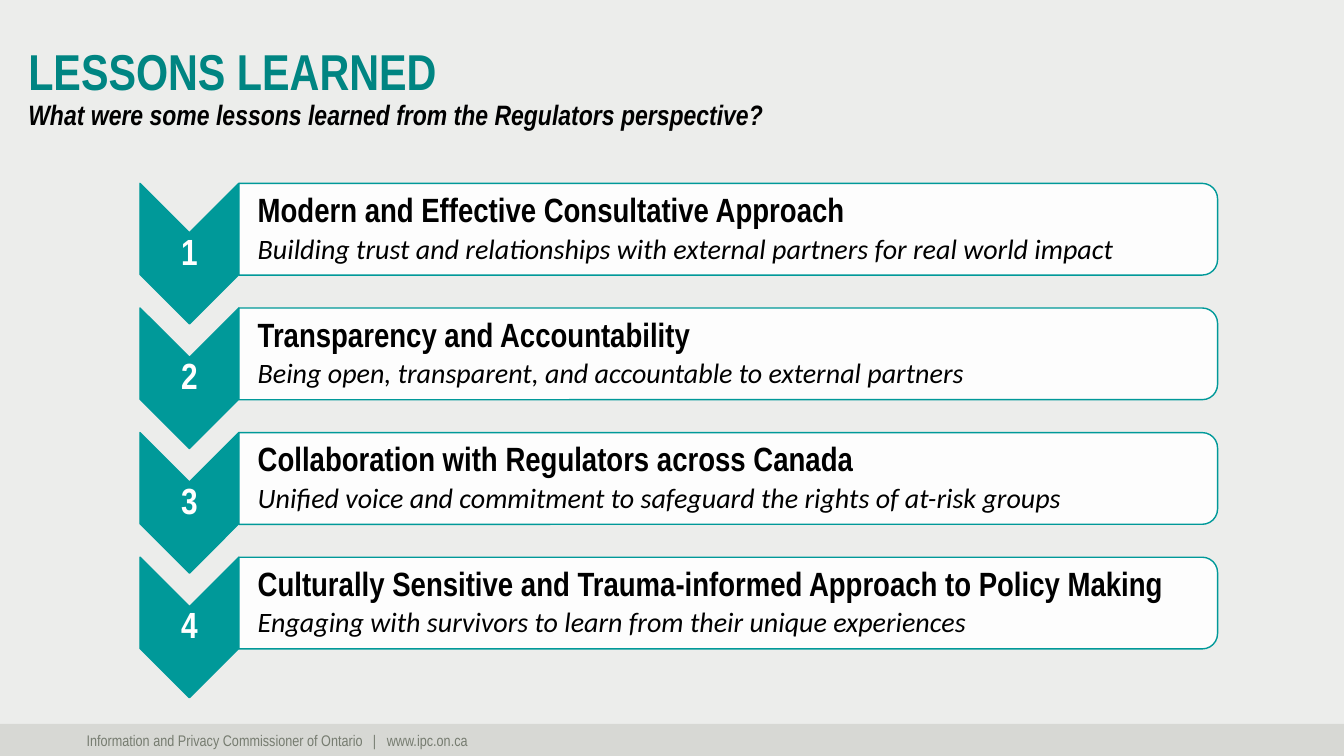
from lxml import etree
from pptx import Presentation
from pptx.dml.color import RGBColor
from pptx.enum.shapes import MSO_SHAPE
from pptx.enum.text import MSO_ANCHOR, MSO_AUTO_SIZE, PP_ALIGN
from pptx.oxml.ns import qn
from pptx.util import Pt

RECT = MSO_SHAPE.RECTANGLE
CHEVRON = MSO_SHAPE.CHEVRON
ROUND_TOP = MSO_SHAPE.ROUND_2_SAME_RECTANGLE
TOP, MIDDLE = MSO_ANCHOR.TOP, MSO_ANCHOR.MIDDLE
LEFT, CENTER = PP_ALIGN.LEFT, PP_ALIGN.CENTER
NO_FIT = MSO_AUTO_SIZE.NONE

COLORS = {
    "bg": "ECEDEB",
    "bar": "D7D8D4",
    "footer": "767C70",
    "title": "008582",
    "teal": "009999",
    "white": "FFFFFF",
    "black": "000000",
}
HEAD_FONT, BODY_FONT = "Arial Narrow", "Calibri"

LESSONS = [
    ("Modern and Effective Consultative Approach",
     "Building trust and relationships with external partners for real world impact"),
    ("Transparency and Accountability",
     "Being open, transparent, and accountable to external partners"),
    ("Collaboration with Regulators across Canada",
     "Unified voice and commitment to safeguard the rights of at-risk groups"),
    ("Culturally Sensitive and Trauma-informed Approach to Policy Making",
     "Engaging with survivors to learn from their unique experiences"),
]


def rgb(name):
    return RGBColor.from_string(COLORS[name])


def add_text(p, text, size=20, font=HEAD_FONT, color="black", bold=False,
             italic=False, align=LEFT, spacing=0.9, after=0):
    p.alignment = align
    p.line_spacing = spacing
    p.space_after = Pt(after)
    r = p.add_run()
    r.text = text
    r.font.size = Pt(size)
    r.font.name = font
    r.font.bold = bold
    r.font.italic = italic
    r.font.color.rgb = rgb(color)


def add_box(slide, x, y, w, h, anchor=MIDDLE, insets=(1.5, 1.5, 1.5, 1.5)):
    tf = slide.shapes.add_textbox(Pt(x), Pt(y), Pt(w), Pt(h)).text_frame
    tf.word_wrap = True
    tf.vertical_anchor = anchor
    tf.margin_left, tf.margin_top, tf.margin_right, tf.margin_bottom = map(Pt, insets)
    return tf


def add_turned(slide, kind, x, y, w, h, fill):
    sp = slide.shapes.add_shape(
        kind, Pt(x + (w - h) / 2), Pt(y + (h - w) / 2), Pt(h), Pt(w))
    sp.rotation = 90
    sp.shadow.inherit = False
    sp.fill.solid()
    sp.fill.fore_color.rgb = rgb(fill)
    sp.line.color.rgb = rgb("teal")
    sp.line.width = Pt(1)
    return sp


def add_footer(slide, x, y, w, h):
    bar = slide.shapes.add_shape(RECT, Pt(x), Pt(y), Pt(w), Pt(h))
    bar.shadow.inherit = False
    bar.fill.solid()
    bar.fill.fore_color.rgb = rgb("bar")
    bar.line.fill.background()
    tf = add_box(slide, x + 54.7, y + 1.4, 425, 21, TOP, (7.2, 3.6, 7.2, 3.6))
    p = tf.paragraphs[0]
    tabs = etree.SubElement(p._p.get_or_add_pPr(), qn("a:tabLst"))
    for stop in (204.5, 214.5):
        etree.SubElement(tabs, qn("a:tab"), pos=str(int(Pt(stop))), algn="l")
    add_text(p, "Information and Privacy Commissioner of Ontario\t|\twww.ipc.on.ca",
             size=11, color="footer", spacing=1.0)


def add_title(slide, x, y, w, h):
    title = slide.shapes.title
    title.left, title.top, title.width, title.height = Pt(x), Pt(y), Pt(w), Pt(h)
    tf = title.text_frame
    tf.word_wrap = True
    tf.auto_size = NO_FIT
    tf.vertical_anchor = MIDDLE
    p = tf.paragraphs[0]
    add_text(p, "LESSONS LEARNED", size=36, color="title", bold=True)
    p.add_line_break()
    add_text(p, "What were some lessons learned from the Regulators perspective?",
             bold=True, italic=True)


def add_lesson(slide, number, heading, detail, x, y, w, h):
    arrow_w, card_h = 70.6, 65.5
    card_w = w - arrow_w
    add_turned(slide, CHEVRON, x, y, arrow_w, h, "teal")
    tf = add_box(slide, x, y + 35, arrow_w, 30)
    add_text(tf.paragraphs[0], str(number), size=26, color="white", bold=True,
             align=CENTER)

    card = add_turned(slide, ROUND_TOP, x + arrow_w, y, card_w, card_h, "white")
    clr = card._element.spPr.find(qn("a:solidFill")).find(qn("a:srgbClr"))
    etree.SubElement(clr, qn("a:alpha"), val="90000")
    tf = add_box(slide, x + arrow_w, y + 3.3, card_w - 3, card_h - 6.5,
                 insets=(13.5, 1.5, 1.5, 1.5))
    add_text(tf.paragraphs[0], heading, size=24, bold=True, after=3.6)
    add_text(tf.add_paragraph(), detail, font=BODY_FONT, italic=True, after=3)


def add_lessons(slide, x, y, w, pitch):
    for i, (heading, detail) in enumerate(LESSONS):
        add_lesson(slide, i + 1, heading, detail, x, y + i * pitch, w, 100.4)


def main():
    prs = Presentation()
    prs.slide_width, prs.slide_height = Pt(960), Pt(540)
    slide = prs.slides.add_slide(prs.slide_layouts[5])
    slide.background.fill.solid()
    slide.background.fill.fore_color.rgb = rgb("bg")
    add_footer(slide, 0, 517, 960, 23)
    add_title(slide, 13, 11.5, 887.8, 104.4)
    add_lessons(slide, 100, 131, 769.7, 89)
    prs.save("out.pptx")


if __name__ == "__main__":
    main()
